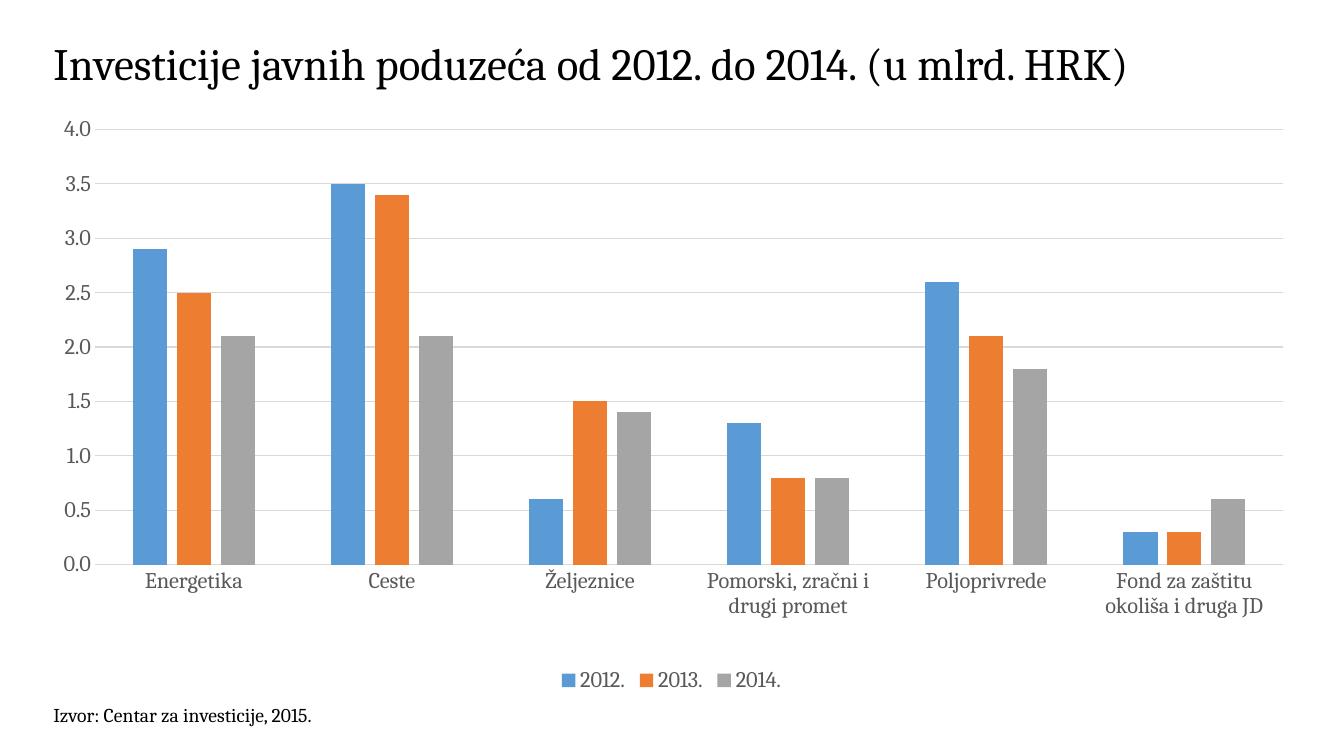
from lxml import etree
from pptx import Presentation
from pptx.chart.data import CategoryChartData as ChartData
from pptx.dml.color import RGBColor
from pptx.enum.chart import XL_CHART_TYPE as ChartType
from pptx.enum.chart import XL_LEGEND_POSITION as LegendPosition
from pptx.enum.chart import XL_TICK_MARK as TickMark
from pptx.enum.text import MSO_ANCHOR as Anchor
from pptx.enum.text import MSO_AUTO_SIZE as AutoSize
from pptx.enum.text import PP_ALIGN as Align
from pptx.oxml.ns import qn
from pptx.util import Inches, Pt

BLACK = RGBColor(0x00, 0x00, 0x00)
LABEL_GRAY = RGBColor(0x59, 0x59, 0x59)
GRID_GRAY = RGBColor(0xD9, 0xD9, 0xD9)
BLUE = RGBColor(0x5B, 0x9B, 0xD5)
ORANGE = RGBColor(0xED, 0x7D, 0x31)
SILVER = RGBColor(0xA5, 0xA5, 0xA5)

WIDTH, HEIGHT = 13.33, 7.5
MARGIN, CONTENT_WIDTH = 0.43 / WIDTH, 12.46 / WIDTH
TITLE_TOP, CHART_TOP, SOURCE_TOP = 0.14 / HEIGHT, 1.16 / HEIGHT, 6.92 / HEIGHT

SECTORS = ["Energetika", "Ceste", "Željeznice", "Pomorski, zračni i drugi promet",
           "Poljoprivrede", "Fond za zaštitu okoliša i druga JD"]
INVESTMENTS = {
    "2012.": (BLUE, [2.9, 3.5, 0.6, 1.3, 2.6, 0.3]),
    "2013.": (ORANGE, [2.5, 3.4, 1.5, 0.8, 2.1, 0.3]),
    "2014.": (SILVER, [2.1, 2.1, 1.4, 0.8, 1.8, 0.6]),
}
PLOT_AREA = {"layoutTarget": "inner", "xMode": "edge", "yMode": "edge",
             "x": 0.041, "y": 0.021, "w": 0.946, "h": 0.75}


def assign(target, values):
    for name, value in values.items():
        setattr(target, name, value)


class SlideBuilder:
    """Holds the font and the current slide; lengths are shares of its size."""

    def __init__(self, deck, font_name):
        self.font_name = font_name
        self.slide = deck.slides.add_slide(deck.slide_layouts[5])

    def box(self, left, top, width, height):
        return (Inches(left * WIDTH), Inches(top * HEIGHT),
                Inches(width * WIDTH), Inches(height * HEIGHT))

    def style(self, font, size, color):
        assign(font, {"name": self.font_name, "size": Pt(size), "bold": False})
        font.color.rgb = color

    def set_text(self, shape, text, size, frame_format, paragraph_format):
        frame = shape.text_frame
        frame.text = text
        assign(frame, frame_format)
        paragraph = frame.paragraphs[0]
        assign(paragraph, paragraph_format)
        self.style(paragraph.runs[0].font, size, BLACK)

    def title(self, text, *place):
        heading = self.slide.shapes.title
        assign(heading, dict(zip(("left", "top", "width", "height"), self.box(*place))))
        self.set_text(heading, text, 32,
                      {"vertical_anchor": Anchor.MIDDLE, "word_wrap": True,
                       "auto_size": AutoSize.NONE},
                      {"alignment": Align.LEFT, "line_spacing": 0.9})

    def note(self, text, *place):
        source = self.slide.shapes.add_textbox(*self.box(*place))
        self.set_text(source, text, 14,
                      {"word_wrap": True, "auto_size": AutoSize.SHAPE_TO_FIT_TEXT},
                      {"alignment": Align.LEFT})

    def column_chart(self, categories, series, plot_area, *place):
        figures = ChartData(number_format="#,##0.0")
        figures.categories = categories
        for year, (_, amounts) in series.items():
            figures.add_series(year, amounts)
        chart = self.slide.shapes.add_chart(
            ChartType.COLUMN_CLUSTERED, *self.box(*place), figures).chart
        self.style(chart.font, 16, BLACK)
        assign(chart, {"has_title": False, "has_legend": True})
        assign(chart.legend, {"position": LegendPosition.BOTTOM, "include_in_layout": False})
        self.style(chart.legend.font, 16, LABEL_GRAY)

        # Columns
        columns = chart.plots[0]
        assign(columns, {"gap_width": 219, "overlap": -27, "vary_by_categories": False})
        for year_columns, (color, _) in zip(columns.series, series.values()):
            year_columns.format.fill.solid()
            year_columns.format.fill.fore_color.rgb = color

        # Axes and gridlines
        sectors, amounts = chart.category_axis, chart.value_axis
        for axis in (sectors, amounts):
            assign(axis, {"major_tick_mark": TickMark.NONE, "minor_tick_mark": TickMark.NONE})
            self.style(axis.tick_labels.font, 16, LABEL_GRAY)
        assign(amounts, {"minimum_scale": 0, "maximum_scale": 4, "major_unit": 0.5,
                         "has_major_gridlines": True})
        assign(amounts.tick_labels, {"number_format": "#,##0.0",
                                     "number_format_is_linked": False})
        amounts.format.line.fill.background()
        for line in (sectors.format.line, amounts.major_gridlines.format.line):
            line.width = Pt(0.75)
            line.color.rgb = GRID_GRAY

        # Fixed inner plot area
        plot = chart.element.find(qn("c:chart")).find(qn("c:plotArea"))
        for automatic in plot.findall(qn("c:layout")):
            plot.remove(automatic)
        layout = etree.Element(qn("c:layout"))
        manual = etree.SubElement(layout, qn("c:manualLayout"))
        for name, value in plot_area.items():
            etree.SubElement(manual, qn(f"c:{name}")).set("val", str(value))
        plot.insert(0, layout)


def main():
    deck = Presentation()
    assign(deck, {"slide_width": Inches(WIDTH), "slide_height": Inches(HEIGHT)})
    investments = SlideBuilder(deck, "Cambria")

    # Title, chart and source
    investments.title("Investicije javnih poduzeća od 2012. do 2014. (u mlrd. HRK)",
                      MARGIN, TITLE_TOP, CONTENT_WIDTH, CHART_TOP - TITLE_TOP)
    investments.column_chart(SECTORS, INVESTMENTS, PLOT_AREA,
                             MARGIN, CHART_TOP, CONTENT_WIDTH, SOURCE_TOP - CHART_TOP)
    investments.note("Izvor: Centar za investicije, 2015.",
                     MARGIN, SOURCE_TOP, 4.42 / WIDTH, 0.34 / HEIGHT)
    deck.save("out.pptx")


if __name__ == "__main__":
    main()
